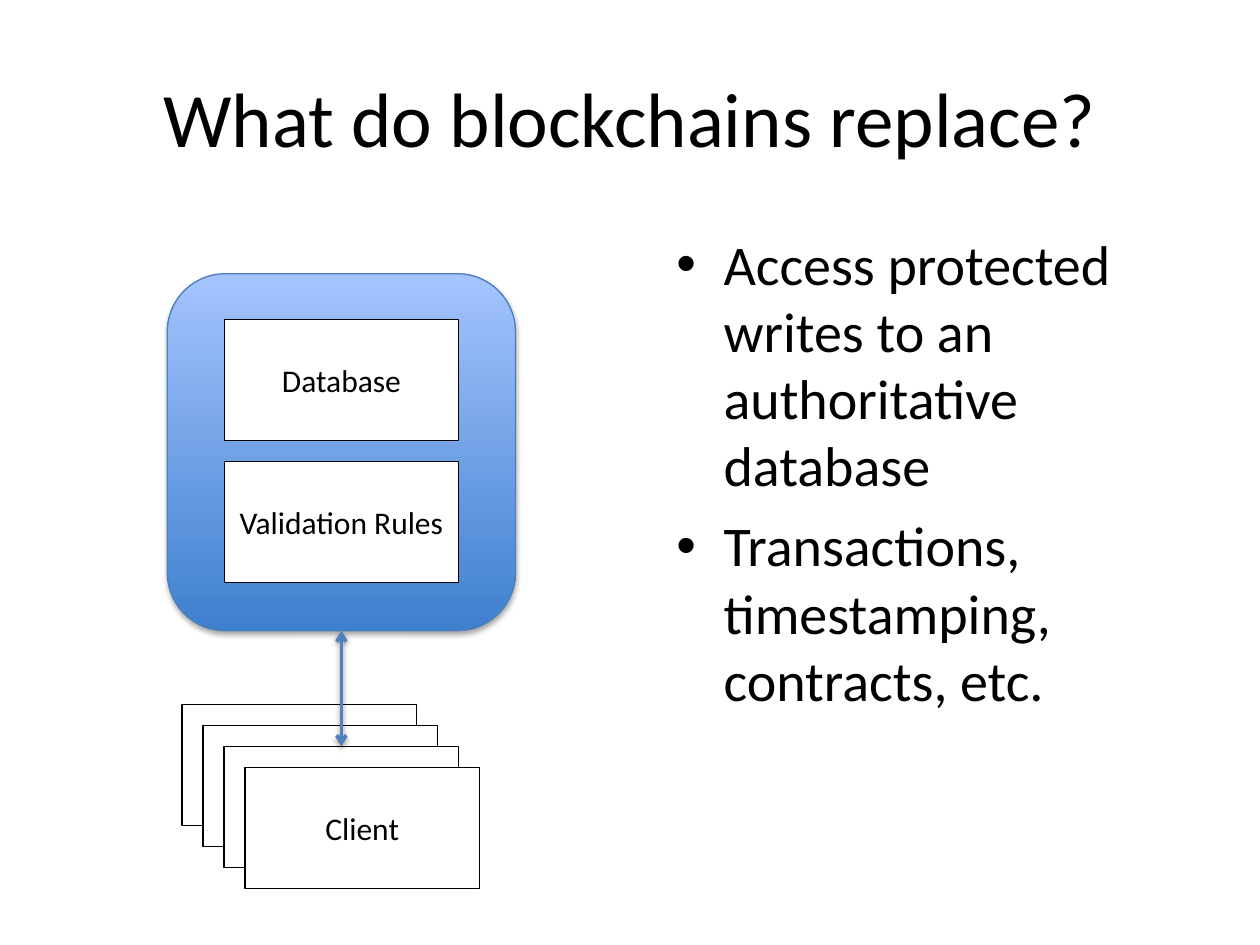
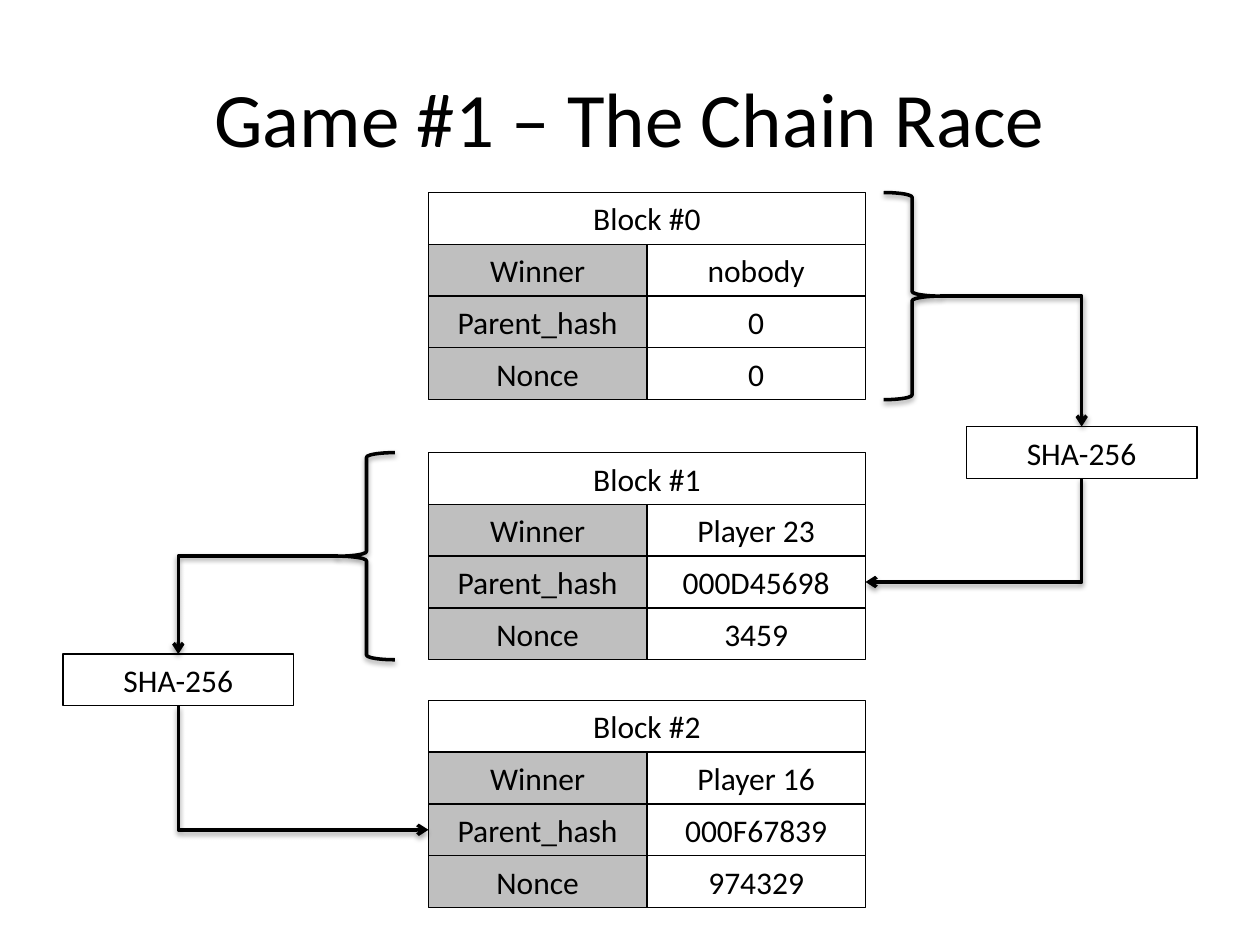
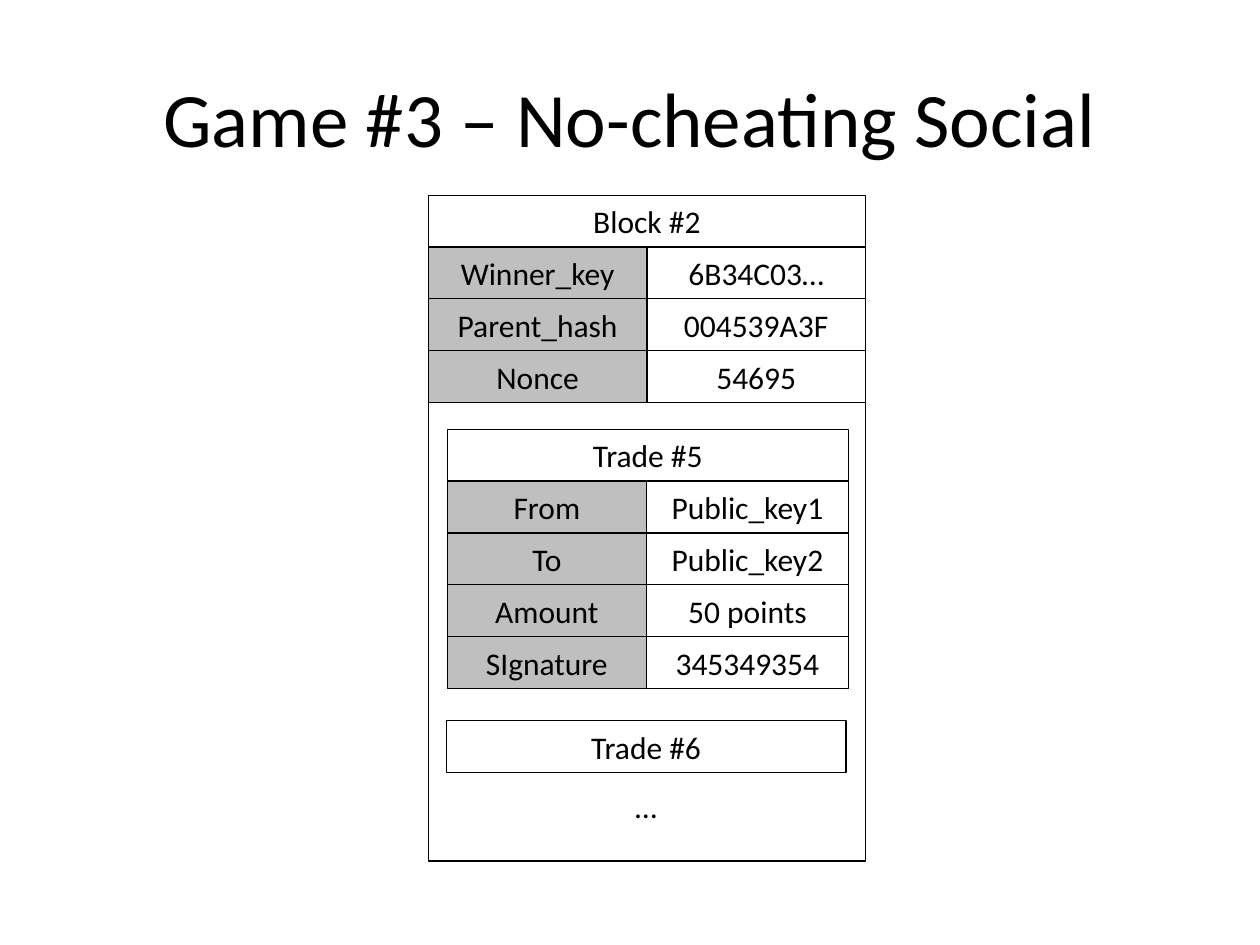
from collections import namedtuple

from lxml.etree import SubElement
from pptx import Presentation
from pptx.dml.color import RGBColor
from pptx.enum.shapes import MSO_CONNECTOR as Connector, MSO_SHAPE as Preset
from pptx.enum.text import MSO_ANCHOR as Anchor, PP_ALIGN as Align
from pptx.oxml.ns import qn
from pptx.util import Pt

Box = namedtuple("Box", "left top width height")
Side = namedtuple("Side", "shape name site")

FONT = "Calibri"
BLACK, WHITE, GREY = "000000", "FFFFFF", "BFBFBF"
BLUE, BLUE_EDGE, BLUE_DARK, BLUE_LIGHT = "4F81BD", "4B7EBC", "3F80CE", "A4C4FF"
TITLE_BOX = Box(36, 21.6, 648, 90)
ROW = 29.6
BLOCK_LEFT, BLOCK_WIDTH = 244.8, 249.8
NODE_WIDTH, NODE_HEIGHT = 134, 69.2
HASH_WIDTH = 131.8
BRACE_WIDTH = 32.4
SITES = {"top": 0, "left": 1, "bottom": 2, "right": 3}


def color(value):
    """Turn a hex string into a colour."""
    return RGBColor.from_string(value)


def points(box):
    """Turn a box of numbers into lengths."""
    return [Pt(value) for value in box]


def set_line(shape, value, width):
    """Give a shape a solid outline."""
    shape.line.color.rgb = color(value)
    shape.line.width = Pt(width)


def add_shadow(shape, alpha=38, distance=1.6):
    """Give a shape a soft shadow that falls straight down."""
    effects = SubElement(shape.element.spPr, qn("a:effectLst"))
    shadow = SubElement(effects, qn("a:outerShdw"), blurRad=str(Pt(3.15)),
                        dist=str(Pt(distance)), dir="5400000", rotWithShape="0")
    shade = SubElement(shadow, qn("a:srgbClr"), val=BLACK)
    SubElement(shade, qn("a:alpha"), val=str(alpha * 1000))


def add_arrowheads(connector, *ends):
    """Put open arrowheads on the named ends of a connector."""
    line = connector.line._get_or_add_ln()
    for end in ends:
        SubElement(line, qn(f"a:{end}"), type="arrow")


def format_text(text_frame, size, align=Align.CENTER):
    """Format every run of a text frame alike."""
    for paragraph in text_frame.paragraphs:
        paragraph.alignment = align
        for run in paragraph.runs:
            run.font.name = FONT
            run.font.size = Pt(size)
            run.font.color.rgb = color(BLACK)


def add_text(slide, box, text, size, wrap=True, align=Align.CENTER, anchor=Anchor.TOP):
    """Add a text box and return it."""
    shape = slide.shapes.add_textbox(*points(box))
    text_frame = shape.text_frame
    text_frame.word_wrap = wrap
    text_frame.vertical_anchor = anchor
    text_frame.text = text
    format_text(text_frame, size, align)
    return shape


def add_cell(slide, box, text="", fill=WHITE):
    """Add an outlined rectangle with centred text."""
    shape = slide.shapes.add_shape(Preset.RECTANGLE, *points(box))
    shape.shadow.inherit = False
    shape.fill.solid()
    shape.fill.fore_color.rgb = color(fill)
    set_line(shape, BLACK, 0.75)
    if text:
        shape.text_frame.text = text
        shape.text_frame.vertical_anchor = Anchor.MIDDLE
        format_text(shape.text_frame, 18)
    return shape


def add_titled_slide(presentation, title):
    """Add a blank slide with a centred title."""
    slide = presentation.slides.add_slide(presentation.slide_layouts[6])
    add_text(slide, TITLE_BOX, title, 44, anchor=Anchor.MIDDLE)
    return slide


def add_bullets(slide, box, items):
    """Add a bulleted list."""
    shape = add_text(slide, box, "\n".join(items), 32, align=Align.LEFT)
    for paragraph in shape.text_frame.paragraphs:
        paragraph.space_before = Pt(7.4)
        properties = paragraph._p.get_or_add_pPr()
        properties.set("marL", str(Pt(27)))
        properties.set("indent", str(-Pt(27)))
        SubElement(properties, qn("a:buFont"), typeface="Arial")
        SubElement(properties, qn("a:buChar"), char="•")


def add_server(slide, box, parts):
    """Add the rounded server with its parts stacked inside."""
    server = slide.shapes.add_shape(Preset.ROUNDED_RECTANGLE, *points(box))
    server.fill.gradient()
    server.fill.gradient_angle = 90
    for stop, value in zip(server.fill.gradient_stops, (BLUE_DARK, BLUE_LIGHT)):
        stop.color.rgb = color(value)
    set_line(server, BLUE_EDGE, 0.75)
    add_shadow(server, 35, 1.8)
    left = box.left + (box.width - NODE_WIDTH) / 2
    for index, part in enumerate(parts):
        top = box.top + 26 + index * 81.4
        add_cell(slide, Box(left, top, NODE_WIDTH, NODE_HEIGHT), part)


def add_client_stack(slide, left, top, count=4, step=12):
    """Add overlapping clients, with the label on the front one."""
    for index in range(count):
        box = Box(left + index * step, top + index * step, NODE_WIDTH, NODE_HEIGHT)
        add_cell(slide, box, "Client" if index == count - 1 else "")


def add_double_arrow(slide, x, top, bottom):
    """Add a vertical arrow with a head on both ends."""
    arrow = slide.shapes.add_connector(Connector.STRAIGHT, *points((x, bottom, x, top)))
    set_line(arrow, BLUE, 2)
    add_arrowheads(arrow, "headEnd", "tailEnd")
    add_shadow(arrow)


def add_record(slide, left, top, width, heading, rows, label_width):
    """Add a heading over label and value rows; return the cells by label."""
    add_cell(slide, Box(left, top, width, ROW), heading)
    cells = {}
    for index, (label, value) in enumerate(rows, start=1):
        y = top + index * ROW
        cells[label] = (
            add_cell(slide, Box(left, y, label_width, ROW), label, GREY),
            add_cell(slide, Box(left + label_width, y, width - label_width, ROW), value),
        )
    return cells


def add_block(slide, top, heading, rows):
    """Add a block of the chain in the middle column."""
    return add_record(slide, BLOCK_LEFT, top, BLOCK_WIDTH, heading, rows, BLOCK_WIDTH / 2)


def add_brace(slide, left, top, rotation=0):
    """Add a brace as tall as a block."""
    brace = slide.shapes.add_shape(
        Preset.RIGHT_BRACE, *points((left, top, BRACE_WIDTH, 4 * ROW)))
    brace.rotation = rotation
    brace.fill.background()
    set_line(brace, BLACK, 2)
    add_shadow(brace)
    return brace


def side_of(shape, name):
    """Describe a side of a rectangle as a connection site."""
    return Side(shape, name, SITES[name])


def side_point(side):
    """Return the middle of a side."""
    shape = side.shape
    x = shape.left + {"left": 0, "right": shape.width}.get(side.name, shape.width // 2)
    y = shape.top + {"top": 0, "bottom": shape.height}.get(side.name, shape.height // 2)
    return x, y


def add_elbow(slide, start, end):
    """Join two sides with a downward arrow that turns once."""
    (x1, y1), (x2, y2) = side_point(start), side_point(end)
    across, down = abs(x2 - x1), abs(y2 - y1)
    elbow = slide.shapes.add_connector(Connector.ELBOW, x1, y1, x2, y2)
    elbow.begin_connect(start.shape, start.site)
    elbow.end_connect(end.shape, end.site)
    vertical_first = start.name == "bottom"
    elbow.width, elbow.height = (down, across) if vertical_first else (across, down)
    elbow.left = (x1 + x2 - elbow.width) // 2
    elbow.top = (y1 + y2 - elbow.height) // 2
    rightward = x2 > x1
    turn = (270 if rightward else 90) if vertical_first else 0
    properties = elbow.element.spPr
    frame = properties.find(qn("a:xfrm"))
    frame.set("rot", str(turn * 60000))
    frame.set("flipH", str(int(rightward == vertical_first)))
    frame.set("flipV", "0")
    properties.find(qn("a:prstGeom")).set("prst", "bentConnector2")
    set_line(elbow, BLACK, 2)
    add_arrowheads(elbow, "tailEnd")
    add_shadow(elbow)


def add_hash_link(slide, brace, tip, hash_left, hash_top, parent_cell):
    """Lead from a brace through a hash to the next block's parent cell."""
    hash_box = add_cell(slide, Box(hash_left, hash_top, HASH_WIDTH, ROW), "SHA-256")
    add_elbow(slide, Side(brace, tip, 1), side_of(hash_box, "top"))
    add_elbow(slide, side_of(hash_box, "bottom"), side_of(parent_cell, tip))


def build_replacement_slide(presentation):
    """Build the slide on what blockchains replace."""
    slide = add_titled_slide(presentation, "What do blockchains replace?")
    add_server(slide, Box(95.6, 156.4, 199, 204), ("Database", "Validation Rules"))
    add_client_stack(slide, 104, 402.4)
    add_double_arrow(slide, 195.1, 360.4, 426.4)
    add_bullets(slide, Box(379.4, 127.4, 304.6, 380.9), (
        "Access protected writes to an authoritative database",
        "Transactions, timestamping, contracts, etc.",
    ))


def build_chain_slide(presentation):
    """Build the slide with three blocks linked by hashes."""
    slide = add_titled_slide(presentation, "Game #1 – The Chain Race")
    labels = ("Winner", "Parent_hash", "Nonce")
    tops = (110, 258.6, 400.2)
    values = (
        ("nobody", "0", "0"),
        ("Player 23", "000D45698", "3459"),
        ("Player 16", "000F67839", "974329"),
    )
    blocks = [
        add_block(slide, top, f"Block #{index}", zip(labels, row))
        for index, (top, row) in enumerate(zip(tops, values))
    ]
    right_brace = add_brace(slide, 505, tops[0])
    add_hash_link(slide, right_brace, "right", 552.2, 243.8, blocks[1]["Parent_hash"][1])
    left_brace = add_brace(slide, 193.2, tops[1], 180)
    add_hash_link(slide, left_brace, "left", 36, 373.8, blocks[2]["Parent_hash"][0])


def build_trades_slide(presentation):
    """Build the slide with a block that holds trades."""
    slide = add_titled_slide(presentation, "Game #3 – No-cheating Social")
    top = 111.6
    add_block(slide, top, "Block #2", (
        ("Winner_key", "6B34C03…"),
        ("Parent_hash", "004539A3F"),
        ("Nonce", "54695"),
    ))
    body = Box(BLOCK_LEFT, top + 4 * ROW, BLOCK_WIDTH, 262)
    add_cell(slide, body)
    trade_left = body.left + 10.8
    add_record(slide, trade_left, body.top + 15.4, 229.2, "Trade #5", (
        ("From", "Public_key1"),
        ("To", "Public_key2"),
        ("Amount", "50 points"),
        ("SIgnature", "345349354"),
    ), 113.8)
    add_cell(slide, Box(trade_left - 0.6, body.top + 181.8, 228.4, ROW), "Trade #6")
    add_text(slide, Box(355.8, body.top + 216.4, 27.4, 29), "…", 18,
             wrap=False, align=Align.LEFT)


def main():
    """Build and save the presentation."""
    presentation = Presentation()
    presentation.slide_width, presentation.slide_height = Pt(720), Pt(540)
    build_replacement_slide(presentation)
    build_chain_slide(presentation)
    build_trades_slide(presentation)
    presentation.save("out.pptx")


if __name__ == "__main__":
    main()
